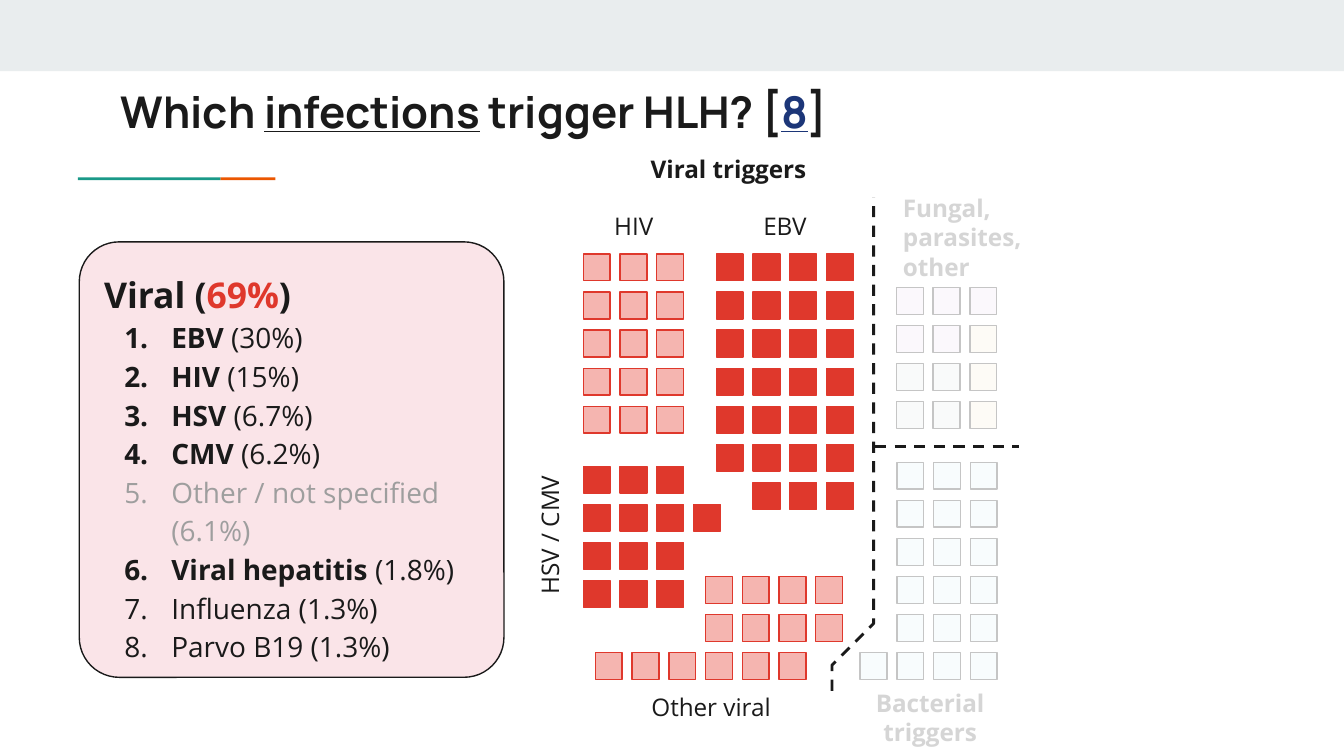
from lxml import etree
from pptx import Presentation
from pptx.dml.color import RGBColor
from pptx.enum.dml import MSO_LINE
from pptx.enum.shapes import MSO_CONNECTOR, MSO_SHAPE
from pptx.enum.text import MSO_ANCHOR, PP_ALIGN
from pptx.oxml.ns import qn
from pptx.util import Inches, Pt

RECT, ROUNDED = MSO_SHAPE.RECTANGLE, MSO_SHAPE.ROUNDED_RECTANGLE
STRAIGHT, DASH = MSO_CONNECTOR.STRAIGHT, MSO_LINE.DASH
TOP, MIDDLE = MSO_ANCHOR.TOP, MSO_ANCHOR.MIDDLE
LEFT, CENTER = PP_ALIGN.LEFT, PP_ALIGN.CENTER

INK, RED, GREY, SOFT_GREY = "1A1A1A", "DF382C", "595959", "9E9E9E"
WHITE, PALE, TEAL, ORANGE = "FFFFFF", "E9EDEE", "1A9988", "EB5600"

BOLD = {"bold": True}
TITLE = [[("Which ", {}), ("infections", {"underline": True}), (" trigger HLH? [", {}),
          ("8", {"underline": True, "color": "1C3678"}), ("]", {})]]

VIRAL_HEADING = [("Viral (", {"size": 19, **BOLD}), ("69%", {"size": 19, "color": RED, **BOLD}),
                 (")", {"size": 19, **BOLD})]
VIRAL_CAUSES = [
    [("EBV", BOLD), (" (30%)", {})],
    [("HIV ", BOLD), ("(15%)", {})],
    [("HSV ", BOLD), ("(6.7%)", {})],
    [("CMV ", BOLD), ("(6.2%)", {})],
    [("Other / not specified (6.1%)", {"color": SOFT_GREY})],
    [("Viral hepatitis", BOLD), (" (1.8%)", {})],
    [("Influenza (1.3%)", {})],
    [("Parvo B19 (1.3%)", {})],
]

CASE_COLOURS = {
    "R": (RED, RED),
    "P": ("F5B5B0", RED),
    "F": ("F0E6F5", INK),
    "Y": ("FBF1DD", INK),
    "O": (PALE, INK),
    "B": ("E5F4F8", INK),
}
CASE_SIZE, COLUMN_STEP, ROW_STEP = 0.2, 0.82 / 3, 1.7 / 6
CASE_BLOCKS = [
    (4.34, 1.89, ["PPP"] * 5),
    (5.33, 1.89, ["RRRR"] * 6 + [".RRR"]),
    (4.34, 3.47, ["RRR", "RRRR", "RRR", "RRR"]),
    (4.43, 4.29, ["...PPPP", "...PPPP", "PPPPPP"]),
    (6.67, 2.14, ["FFF", "FFY", "OOY", "OOY"]),
    (6.40, 3.44, [".BBB"] * 5 + ["BBBB"]),
]

GROUP_LABELS = [
    (["EBV"], (5.33, 1.47, 1.02, 0.42), {}),
    (["HIV"], (4.34, 1.47, 0.75, 0.42), {}),
    (["HSV / CMV"], (3.32, 3.77, 1.54, 0.42), {"rotation": 270}),
    (["Other viral"], (4.7, 5.05, 1.18, 0.42), {}),
    (["Viral triggers"], (4.34, 1.05, 2.16, 0.42), {"bold": True}),
    (["Fungal, parasites, other"], (6.62, 1.34, 1.18, 0.86),
     {"bold": True, "color": GREY, "align": LEFT}),
    (["Bacterial", "triggers"], (6.34, 5.02, 1.16, 0.64), {"bold": True, "color": GREY}),
]

VEILS = [(6.63, 1.34, 1.42, 3.8), (6.32, 4.78, 0.31, 0.33), (6.4, 5.13, 1.07, 0.47)]
DIVIDER = [(6.19, 5.14), (6.19, 4.95), (6.5, 4.64), (6.5, 1.47)]
BRANCH = [(6.51, 3.32), (7.58, 3.32)]


def rgb(colour):
    return RGBColor.from_string(colour)


def add_box(box, fill, line=None, kind=RECT, opacity=None):
    shape = slide.shapes.add_shape(kind, *map(Inches, box))
    shape.shadow.inherit = False
    shape.fill.solid()
    shape.fill.fore_color.rgb = rgb(fill)
    if opacity:
        colour = shape._element.spPr.find(qn("a:solidFill"))[0]
        etree.SubElement(colour, qn("a:alpha"), val=str(opacity * 1000))
    if line:
        shape.line.color.rgb = rgb(line)
        shape.line.width = Pt(0.75)
    else:
        shape.line.fill.background()
    return shape


def add_text(paragraphs, box=None, holder=None, size=13, font="Open Sans", color=INK, bold=False,
             align=CENTER, anchor=TOP, spacing=None, numbered_from=None, rotation=0):
    holder = holder or slide.shapes.add_textbox(*map(Inches, box))
    holder.rotation = rotation
    frame = holder.text_frame
    frame.word_wrap = True
    frame.vertical_anchor = anchor
    frame.margin_left = frame.margin_right = frame.margin_top = frame.margin_bottom = Inches(0.1)
    for index, content in enumerate(paragraphs):
        paragraph = frame.add_paragraph() if index else frame.paragraphs[0]
        paragraph.alignment = align
        if spacing:
            paragraph.line_spacing = spacing
        runs = [(content, {})] if isinstance(content, str) else content
        if numbered_from is not None and index >= numbered_from:
            properties = paragraph._p.get_or_add_pPr()
            properties.set("marL", str(Inches(0.5)))
            properties.set("indent", str(Inches(-0.35)))
            bullet_colour = etree.SubElement(properties, qn("a:buClr"))
            etree.SubElement(bullet_colour, qn("a:srgbClr"), val=runs[0][1].get("color", color))
            etree.SubElement(properties, qn("a:buFont"), typeface=font)
            etree.SubElement(properties, qn("a:buAutoNum"), type="arabicPeriod")
        for words, style in runs:
            run = paragraph.add_run()
            run.text = words
            run.font.name = font
            run.font.size = Pt(style.get("size", size))
            run.font.bold = style.get("bold", bold)
            run.font.underline = style.get("underline", False)
            run.font.color.rgb = rgb(style.get("color", color))


def style_dashes(line):
    line.color.rgb = rgb(INK)
    line.width = Pt(1.5)
    line.dash_style = DASH


presentation = Presentation()
presentation.slide_width = Inches(10)
presentation.slide_height = Inches(10 * 9 / 16)
slide = presentation.slides.add_slide(presentation.slide_layouts[6])

add_box((0, 0, 10, 0.53), PALE)
add_box((1.64, 1.32, 0.41, 0.02), ORANGE)
add_box((0.58, 1.32, 1.06, 0.02), TEAL)
add_text(TITLE, (0.8, 0.53, 8.41, 0.59), size=23.4, font="Manrope", bold=True,
         align=LEFT, anchor=MIDDLE)

viral_card = add_box((0.59, 1.8, 3.16, 3.24), "FAE4E8", INK, ROUNDED)
viral_card.adjustments[0] = 0.094
add_text([VIRAL_HEADING] + VIRAL_CAUSES, holder=viral_card, size=15, align=LEFT,
         spacing=1.15, numbered_from=1)

for left, top, rows in CASE_BLOCKS:
    for row, cases in enumerate(rows):
        for column, case in enumerate(cases):
            if case in CASE_COLOURS:
                add_box((left + column * COLUMN_STEP, top + row * ROW_STEP, CASE_SIZE, CASE_SIZE),
                        *CASE_COLOURS[case])

for words, box, style in GROUP_LABELS:
    add_text(words, box, **style)

for box in VEILS:
    add_box(box, WHITE, opacity=75)

points = [(Inches(x), Inches(y)) for x, y in DIVIDER]
outline = slide.shapes.build_freeform(*points[0])
outline.add_line_segments(points[1:], close=False)
divider = outline.convert_to_shape()
divider.shadow.inherit = False
divider.fill.background()
style_dashes(divider.line)

start, end = BRANCH
branch = slide.shapes.add_connector(STRAIGHT, *map(Inches, start + end))
style_dashes(branch.line)
etree.SubElement(branch._element.spPr, qn("a:effectLst"))

presentation.save("out.pptx")
